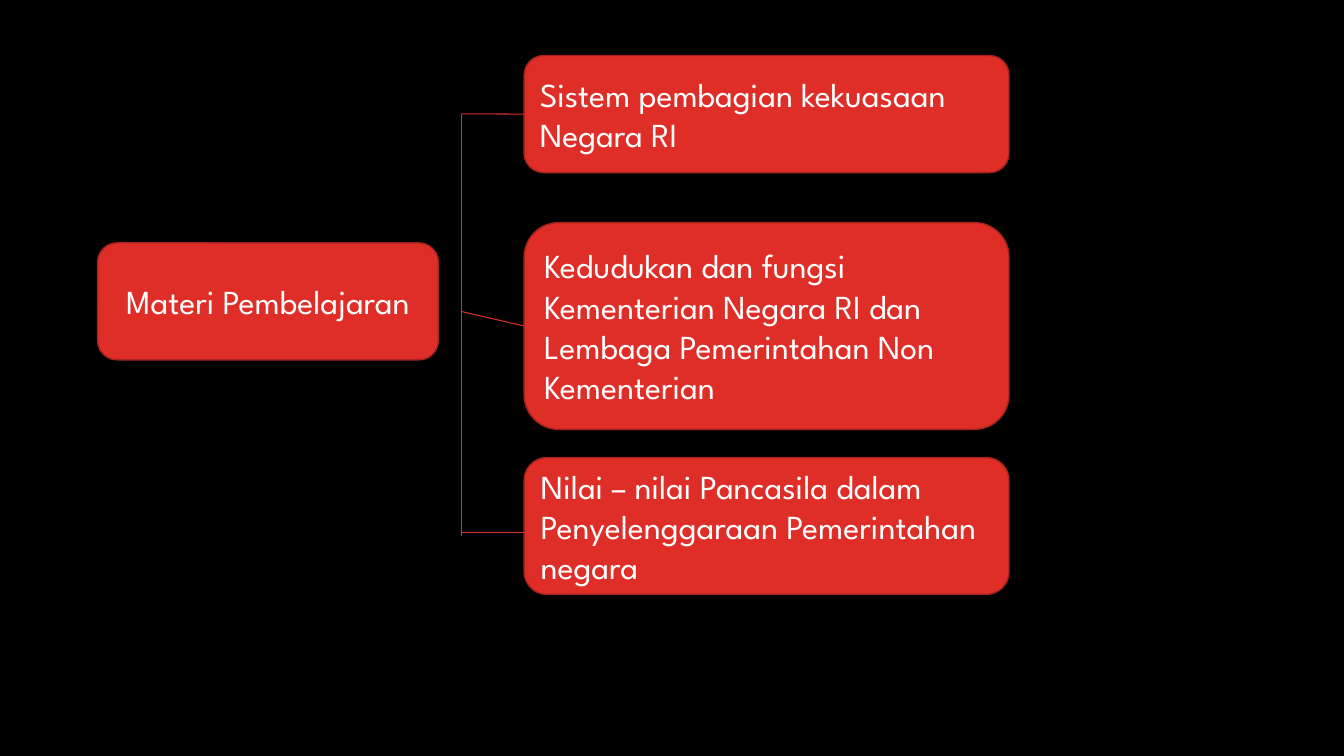
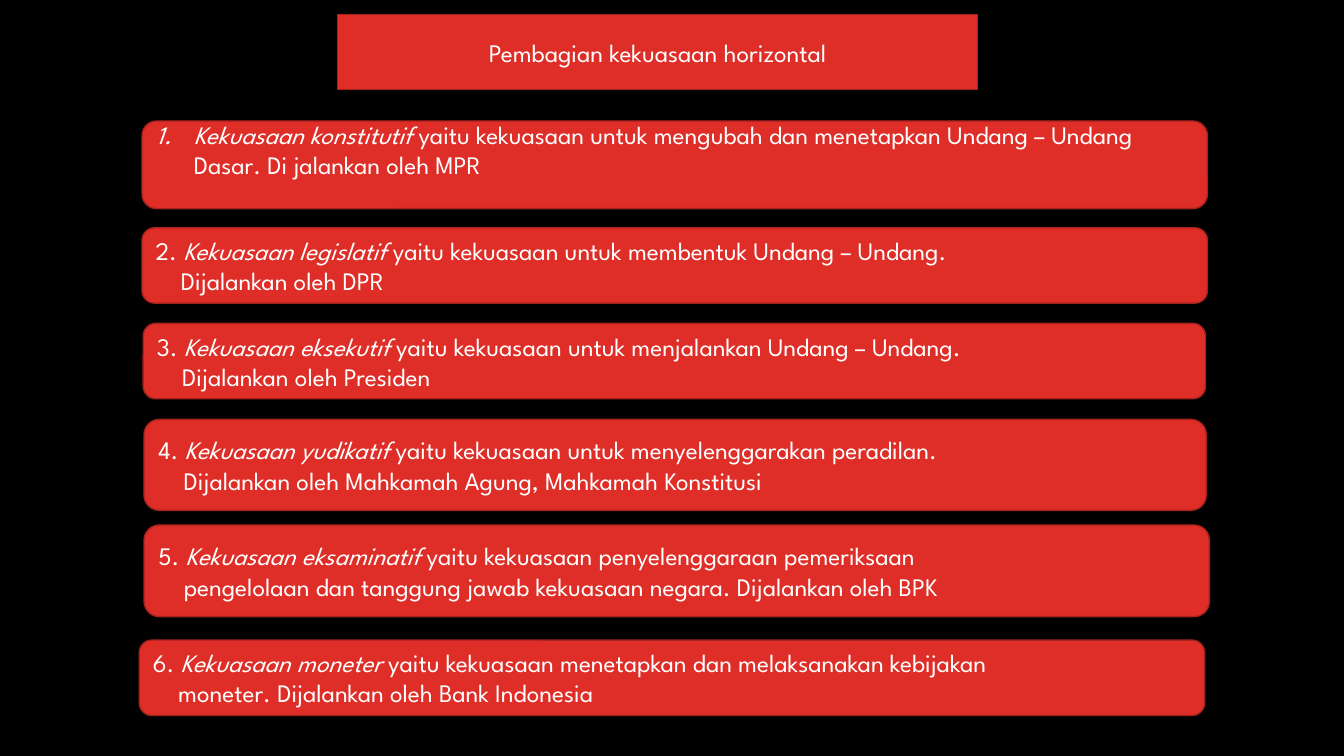
"""Build two slides on the division of state power in Indonesia."""
import dataclasses

import lxml.etree
import pptx
import pptx.dml.color
import pptx.enum.shapes
import pptx.enum.text
import pptx.oxml.ns
import pptx.util

Cm = pptx.util.Cm
Pt = pptx.util.Pt
qn = pptx.oxml.ns.qn
RGB = pptx.dml.color.RGBColor
ALIGN = pptx.enum.text.PP_ALIGN
SHAPES = pptx.enum.shapes.MSO_SHAPE
STRAIGHT = pptx.enum.shapes.MSO_CONNECTOR.STRAIGHT


@dataclasses.dataclass(frozen=True)
class Theme:
    background: RGB = RGB(0x00, 0x00, 0x00)
    red: RGB = RGB(0xDF, 0x2E, 0x28)
    outline: RGB = RGB(0xA5, 0x22, 0x1E)
    text: RGB = RGB(0xFF, 0xFF, 0xFF)
    font: str = "League Spartan"
    diagram_size: int = 24
    list_size: int = 18


theme = Theme()


def style_box(box, size, align=ALIGN.LEFT):
    box.shadow.inherit = False
    box.fill.solid()
    box.fill.fore_color.rgb = theme.red
    box.line.color.rgb = theme.outline
    box.line.width = Pt(1)
    frame = box.text_frame
    frame.word_wrap = True
    frame.auto_size = pptx.enum.text.MSO_AUTO_SIZE.NONE
    frame.vertical_anchor = pptx.enum.text.MSO_ANCHOR.MIDDLE
    for paragraph in frame.paragraphs:
        paragraph.alignment = align
        for run in paragraph.runs:
            run.font.name = theme.font
            run.font.size = Pt(size)
            run.font.color.rgb = theme.text


def add_line(slide, x1, y1, x2, y2):
    line = slide.shapes.add_connector(STRAIGHT, Cm(x1), Cm(y1), Cm(x2), Cm(y2))
    line.line.color.rgb = theme.red
    line.line.width = Pt(0.75)
    lxml.etree.SubElement(line._element.spPr, qn("a:effectLst"))
    return line


prs = pptx.Presentation()
prs.slide_width = Cm(33.87)
prs.slide_height = Cm(19.05)
prs.slide_master.background.fill.solid()
prs.slide_master.background.fill.fore_color.rgb = theme.background
title_only = prs.slide_layouts[5]
blank = prs.slide_layouts[6]

overview = prs.slides.add_slide(blank)
subject = overview.shapes.add_shape(
    SHAPES.ROUNDED_RECTANGLE, Cm(2.46), Cm(6.12), Cm(8.59), Cm(2.95))
subject.text_frame.text = "Materi Pembelajaran"
style_box(subject, theme.diagram_size, ALIGN.CENTER)

trunk_x, topic_x = 11.63, 13.21
add_line(overview, trunk_x, 2.87, trunk_x, 13.51)

topics = [
    (1.4, 2.95, 2.87, True, "Sistem pembagian kekuasaan Negara RI"),
    (5.61, 5.21, 7.85, True,
     "Kedudukan dan fungsi Kementerian Negara RI dan Lembaga Pemerintahan Non Kementerian"),
    (11.53, 3.45, 13.41, False,
     "Nilai – nilai Pancasila dalam Penyelenggaraan Pemerintahan negara"),
]
for top, height, branch_y, joined, wording in topics:
    topic = overview.shapes.add_shape(
        SHAPES.ROUNDED_RECTANGLE, Cm(topic_x), Cm(top), Cm(12.22), Cm(height))
    topic.text_frame.text = wording
    style_box(topic, theme.diagram_size)
    branch = add_line(overview, trunk_x, branch_y, topic_x, branch_y)
    if joined:
        branch.end_connect(topic, 1)

powers_slide = prs.slides.add_slide(title_only)
heading = powers_slide.shapes.title
heading.left, heading.top = Cm(8.51), Cm(0.36)
heading.width, heading.height = Cm(16.13), Cm(1.9)
outline = lxml.etree.SubElement(heading._element.spPr, qn("a:prstGeom"), prst="roundRect")
lxml.etree.SubElement(outline, qn("a:avLst"))
heading.text_frame.text = "Pembagian kekuasaan horizontal"
style_box(heading, theme.list_size, ALIGN.CENTER)

powers = [
    (3.58, 3.05, 26.85, 2.21, "", "Kekuasaan konstitutif ",
     "yaitu kekuasaan untuk mengubah dan menetapkan Undang – Undang Dasar. Di jalankan oleh MPR",
     ""),
    (3.58, 5.74, 26.85, 1.9, "2. ", "Kekuasaan legislatif ",
     "yaitu kekuasaan untuk membentuk Undang – Undang.",
     "Dijalankan oleh DPR"),
    (3.61, 8.15, 26.77, 1.9, "3. ", "Kekuasaan eksekutif ",
     "yaitu kekuasaan untuk menjalankan Undang – Undang.",
     "Dijalankan oleh Presiden"),
    (3.63, 10.57, 26.77, 2.29, "4. ", "Kekuasaan yudikatif ",
     "yaitu kekuasaan untuk menyelenggarakan peradilan.",
     "Dijalankan oleh Mahkamah Agung, Mahkamah Konstitusi"),
    (3.63, 13.23, 26.85, 2.31, "5. ", "Kekuasaan eksaminatif ",
     "yaitu kekuasaan penyelenggaraan pemeriksaan",
     "pengelolaan dan tanggung jawab kekuasaan negara. Dijalankan oleh BPK"),
    (3.51, 16.13, 26.85, 1.9, "6. ", "Kekuasaan moneter ",
     "yaitu kekuasaan menetapkan dan melaksanakan kebijakan",
     "moneter. Dijalankan oleh Bank Indonesia"),
]
for left, top, width, height, number, term, meaning, holder in powers:
    power = powers_slide.shapes.add_shape(
        SHAPES.ROUNDED_RECTANGLE, Cm(left), Cm(top), Cm(width), Cm(height))
    definition = power.text_frame.paragraphs[0]
    if number:
        definition.add_run().text = number
    else:
        properties = definition._p.get_or_add_pPr()
        properties.set("marL", str(Cm(0.95)))
        properties.set("indent", str(-Cm(0.95)))
        lxml.etree.SubElement(properties, qn("a:buFont"), typeface="+mj-lt")
        lxml.etree.SubElement(properties, qn("a:buAutoNum"), type="arabicPeriod")
        power.text_frame.margin_bottom = Cm(0.9)
    term_run = definition.add_run()
    term_run.text = term
    term_run.font.italic = True
    definition.add_run().text = meaning
    if holder:
        continuation = power.text_frame.add_paragraph()
        continuation.text = holder
        continuation._p.get_or_add_pPr().set("marL", str(Cm(0.64)))
    style_box(power, theme.list_size)

prs.save("out.pptx")
